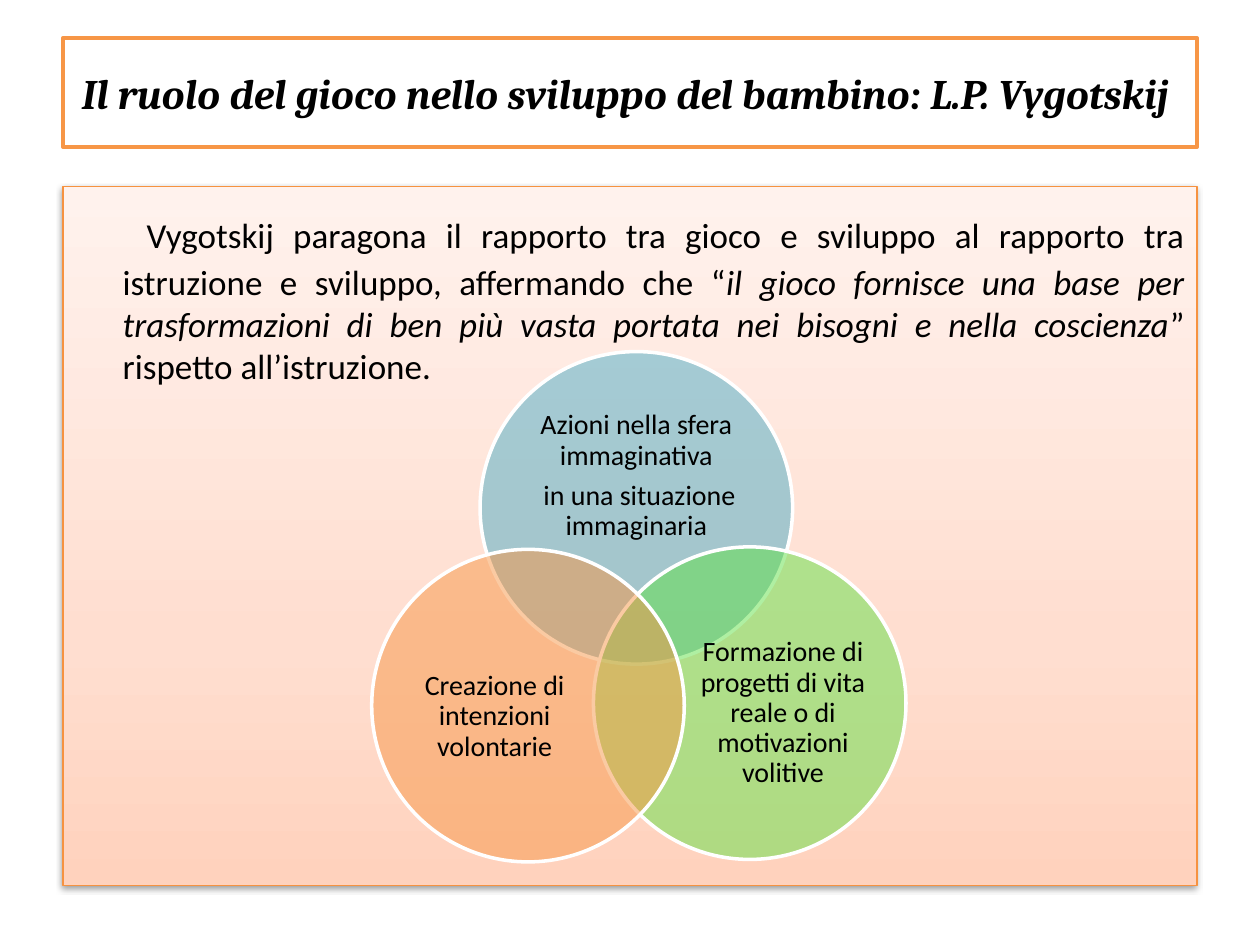
from lxml import etree
from pptx import Presentation
from pptx.dml.color import RGBColor
from pptx.enum import shapes, text
from pptx.oxml import parse_xml
from pptx.oxml.ns import nsdecls, qn
from pptx.util import Pt

MIDDLE, TOP = text.MSO_ANCHOR.MIDDLE, text.MSO_ANCHOR.TOP
CENTER, JUSTIFY = text.PP_ALIGN.CENTER, text.PP_ALIGN.JUSTIFY


def rgb(color):
    return RGBColor.from_string(color)


def write(sp, paragraphs, size, anchor=MIDDLE, align=CENTER, inset=None,
          line=None, before=0, after=0):
    """Fill a shape; each paragraph is a list of (text, run font overrides)."""
    tf = sp.text_frame
    tf.word_wrap = True
    tf.vertical_anchor = anchor
    if inset is not None:
        tf.margin_left = tf.margin_right = tf.margin_top = tf.margin_bottom = Pt(inset)
    for i, runs in enumerate(paragraphs):
        p = tf.add_paragraph() if i else tf.paragraphs[0]
        p.alignment = align
        p.line_spacing = line
        p.space_before, p.space_after = Pt(before), Pt(after)
        for words, font in runs:
            r = p.add_run()
            r.text = words
            r.font.color.rgb = rgb("000000")
            for name, value in {"name": "Calibri", "size": Pt(size), **font}.items():
                setattr(r.font, name, value)


prs = Presentation()
prs.slide_width, prs.slide_height = Pt(720), Pt(540)
s = prs.slides.add_slide(prs.slide_layouts[6])

# Title
title = s.shapes.add_shape(shapes.MSO_SHAPE.RECTANGLE, Pt(36), Pt(21.6), Pt(648), Pt(62.6))
title.shadow.inherit = False
title.fill.solid()
title.fill.fore_color.rgb = rgb("FFFFFF")
title.line.color.rgb = rgb("F79646")
title.line.width = Pt(2)
heading = {"name": "Cambria", "bold": True, "italic": True}
write(title, [[("Il ruolo del gioco nello sviluppo del bambino", heading),
               (": ", {**heading, "name": "Calibri"}),
               ("L.P. Vygotskij ", heading)]], 24)

# Panel with gradient, shadow and the main paragraph
panel = s.shapes.add_shape(shapes.MSO_SHAPE.RECTANGLE, Pt(36), Pt(106.6), Pt(648), Pt(399.6))
panel.shadow.inherit = False
panel.line.color.rgb = rgb("F69240")
panel.line.width = Pt(0.75)
stops = "".join(f'<a:gs pos="{pos * 1000}"><a:srgbClr val="{color}"/></a:gs>'
                for pos, color in [(0, "FFD2BD"), (35, "FFDED0"), (100, "FFF2ED")])
panel.line._ln.addprevious(parse_xml(
    f'<a:gradFill {nsdecls("a")} rotWithShape="1"><a:gsLst>{stops}</a:gsLst>'
    '<a:lin ang="16200000" scaled="0"/></a:gradFill>'))
panel._element.spPr.find(qn("a:effectLst")).append(parse_xml(
    f'<a:outerShdw {nsdecls("a")} blurRad="{Pt(3.1)}" dist="{Pt(1.6)}" dir="5400000" '
    'rotWithShape="0"><a:srgbClr val="000000"><a:alpha val="38000"/></a:srgbClr></a:outerShdw>'))
write(panel, [[
    (" ", {"size": Pt(32)}),
    ("Vygotskij paragona il rapporto tra gioco e sviluppo al rapporto tra "
     "istruzione e sviluppo, affermando che “", {}),
    ("il gioco fornisce una base per trasformazioni di ben più vasta portata "
     "nei bisogni e nella coscienza", {"italic": True}),
    ("” rispetto all’istruzione.", {})]], 20, anchor=TOP, align=JUSTIFY, before=4)
panel.text_frame.paragraphs[0]._p.get_or_add_pPr().set("marL", str(Pt(27)))

# Venn diagram: circle position, colour, label box, label paragraphs
DIAMETER = 178.6
circles = [
    (274.3, 200.9, "4BACC6", (298.1, 231.8, 131, 80.6),
     ["Azioni nella sfera immaginativa", " in una situazione immaginaria"]),
    (339.1, 312.5, "60E146", (393.8, 358.6, 107.3, 97.9),
     ["Formazione di progetti di vita reale o di motivazioni volitive"]),
    (212.4, 313.9, "F79646", (229, 360.7, 107.3, 97.9),
     ["Creazione di intenzioni volontarie"]),
]
for x, y, color, box, label in circles:
    sp = s.shapes.add_shape(shapes.MSO_SHAPE.OVAL, Pt(x), Pt(y), Pt(DIAMETER), Pt(DIAMETER))
    sp.shadow.inherit = False
    sp.fill.solid()
    sp.fill.fore_color.rgb = rgb(color)
    fill = sp._element.spPr.find(qn("a:solidFill"))
    etree.SubElement(fill[0], qn("a:alpha"), val="50000")
    sp.line.color.rgb = rgb("FFFFFF")
    sp.line.width = Pt(2)
    tb = s.shapes.add_textbox(*map(Pt, box))
    write(tb, [[(words, {})] for words in label], 16, inset=0, line=0.9, after=5.6)

prs.save("out.pptx")
